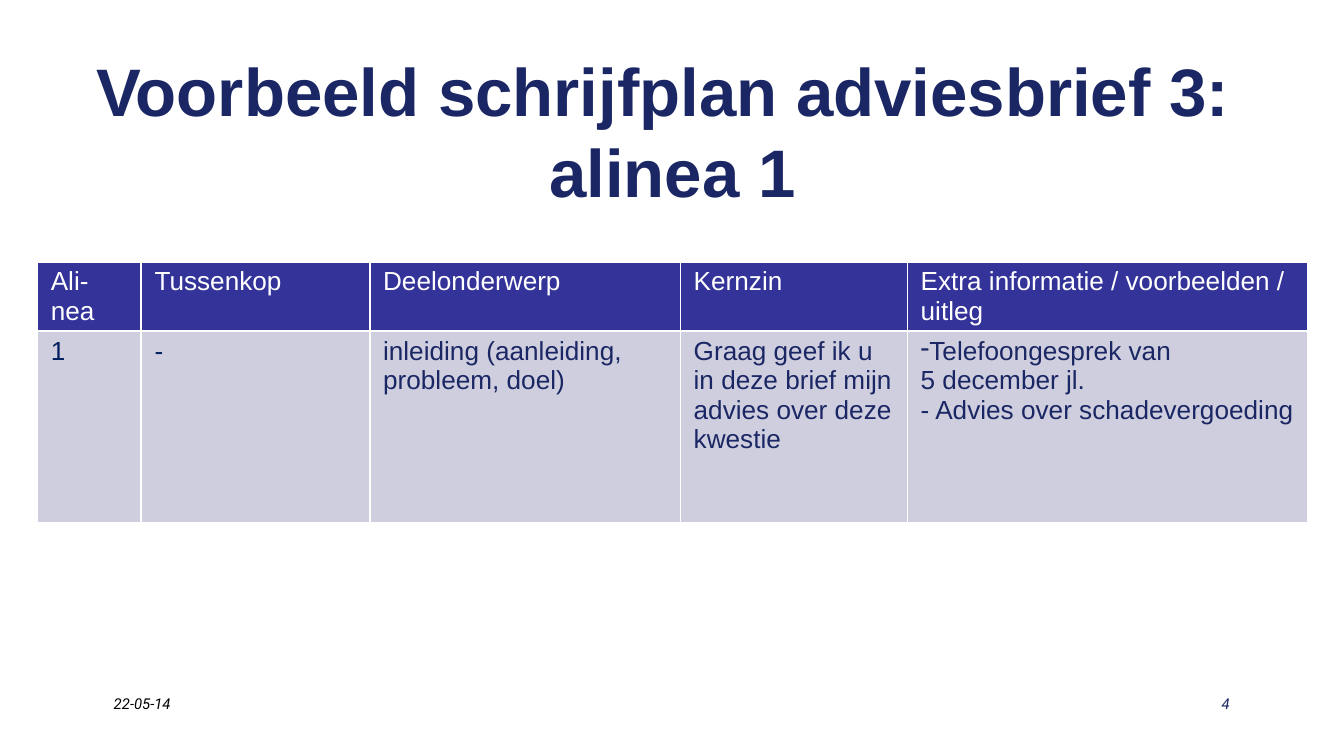
import dataclasses
import typing

import pptx
import pptx.dml.color
import pptx.enum.text
import pptx.oxml
import pptx.oxml.ns
import pptx.util

Cm = pptx.util.Cm
Pt = pptx.util.Pt
Align = pptx.enum.text.PP_ALIGN
Anchor = pptx.enum.text.MSO_ANCHOR

NAVY = "1B2764"
DEEP_BLUE = "002060"
WHITE = "FFFFFF"
BLACK = "000000"
HEADER_FILL = "333399"
BODY_FILL = "CECEDE"

LEFT, WIDTH = 0.71, 24
COLUMN_WIDTHS = (1.96, 4.32, 5.87, 4.29, 7.57)
ROW_HEIGHTS = (1.3, 3.63)

TITLE_FONT = {"name": "Arial", "size": Pt(36), "bold": True, "italic": False}
TABLE_FONT = {"name": "Arial", "size": Pt(14), "bold": False, "italic": False}
FOOTER_FONT = {"name": "Roboto", "size": Pt(8), "bold": False, "italic": True}
CELL_MARGINS = {
    "margin_left": Cm(0.25),
    "margin_right": Cm(0.25),
    "margin_top": Cm(0.1),
    "margin_bottom": Cm(0.1),
}


@dataclasses.dataclass
class Entry:
    text: str
    color: str
    fill: str
    bullet: str = ""


@dataclasses.dataclass
class Footer:
    text: str
    left: float
    color: str
    align: Align


HEADINGS = (
    "Ali-nea",
    "Tussenkop",
    "Deelonderwerp",
    "Kernzin",
    "Extra informatie / voorbeelden / uitleg",
)
ROWS = (
    tuple(Entry(heading, WHITE, HEADER_FILL) for heading in HEADINGS),
    (
        Entry("1", DEEP_BLUE, BODY_FILL),
        Entry("-", DEEP_BLUE, BODY_FILL),
        Entry("inleiding (aanleiding, probleem, doel)", NAVY, BODY_FILL),
        Entry("Graag geef ik u in deze brief mijn advies over deze kwestie", NAVY, BODY_FILL),
        Entry(
            "Telefoongesprek van \v5 december jl.\v- Advies over schadevergoeding",
            NAVY,
            BODY_FILL,
            "-",
        ),
    ),
)
FOOTERS = (
    Footer("22-05-14", 1.9, BLACK, Align.LEFT),
    Footer("4", 18.21, NAVY, Align.RIGHT),
)


def rgb(value: str) -> pptx.dml.color.RGBColor:
    return pptx.dml.color.RGBColor.from_string(value)


def apply(target: typing.Any, values: dict) -> None:
    for name, value in values.items():
        setattr(target, name, value)


def write(frame: typing.Any, text: str, font: dict, color: str, align: Align) -> None:
    para = frame.paragraphs[0]
    para.text = text
    para.alignment = align
    for span in para.runs:
        apply(span.font, font)
        span.font.color.rgb = rgb(color)


def add_bullet(para: typing.Any, character: str) -> None:
    properties = para._p.get_or_add_pPr()
    properties.set("marL", "0")
    properties.set("indent", "0")
    properties.append(pptx.oxml.parse_xml(
        f'<a:buChar {pptx.oxml.ns.nsdecls("a")} char="{character}"/>'
    ))


def add_borders(cell: typing.Any, color: str) -> None:
    properties = cell._tc.get_or_add_tcPr()
    for side in ("lnL", "lnR", "lnT", "lnB"):
        properties.append(pptx.oxml.parse_xml(
            f'<a:{side} {pptx.oxml.ns.nsdecls("a")} w="{Pt(1)}">'
            f'<a:solidFill><a:srgbClr val="{color}"/></a:solidFill></a:{side}>'
        ))


def draw_title(slide: typing.Any, text: str) -> None:
    title = slide.shapes.title
    apply(title, {"left": Cm(LEFT), "top": Cm(1.27), "width": Cm(WIDTH), "height": Cm(2.39)})
    apply(title.text_frame, {
        "word_wrap": True,
        "vertical_anchor": Anchor.MIDDLE,
        "auto_size": pptx.enum.text.MSO_AUTO_SIZE.NONE,
    })
    write(title.text_frame, text, TITLE_FONT, NAVY, Align.CENTER)


def draw_cell(cell: typing.Any, entry: Entry) -> None:
    add_borders(cell, WHITE)
    apply(cell, CELL_MARGINS)
    cell.fill.solid()
    cell.fill.fore_color.rgb = rgb(entry.fill)
    if entry.bullet:
        add_bullet(cell.text_frame.paragraphs[0], entry.bullet)
    write(cell.text_frame, entry.text, TABLE_FONT, entry.color, Align.LEFT)


def draw_table(slide: typing.Any) -> None:
    table = slide.shapes.add_table(
        len(ROWS), len(COLUMN_WIDTHS),
        Cm(LEFT), Cm(4.95), Cm(sum(COLUMN_WIDTHS)), Cm(sum(ROW_HEIGHTS)),
    ).table
    for column, width in zip(table.columns, COLUMN_WIDTHS):
        column.width = Cm(width)
    for row, height, entries in zip(table.rows, ROW_HEIGHTS, ROWS):
        row.height = Cm(height)
        for cell, entry in zip(row.cells, entries):
            draw_cell(cell, entry)


def draw_footer(slide: typing.Any, footer: Footer) -> None:
    box = slide.shapes.add_textbox(Cm(footer.left), Cm(13), Cm(5.28), Cm(0.97))
    box.text_frame.word_wrap = True
    write(box.text_frame, footer.text, FOOTER_FONT, footer.color, footer.align)


def main() -> None:
    deck = pptx.Presentation()
    apply(deck, {"slide_width": Cm(25.4), "slide_height": Cm(14.29)})
    page = deck.slides.add_slide(deck.slide_layouts.get_by_name("Title Only"))
    draw_title(page, "Voorbeeld schrijfplan adviesbrief 3: \valinea 1")
    draw_table(page)
    for footer in FOOTERS:
        draw_footer(page, footer)
    deck.save("out.pptx")


if __name__ == "__main__":
    main()
